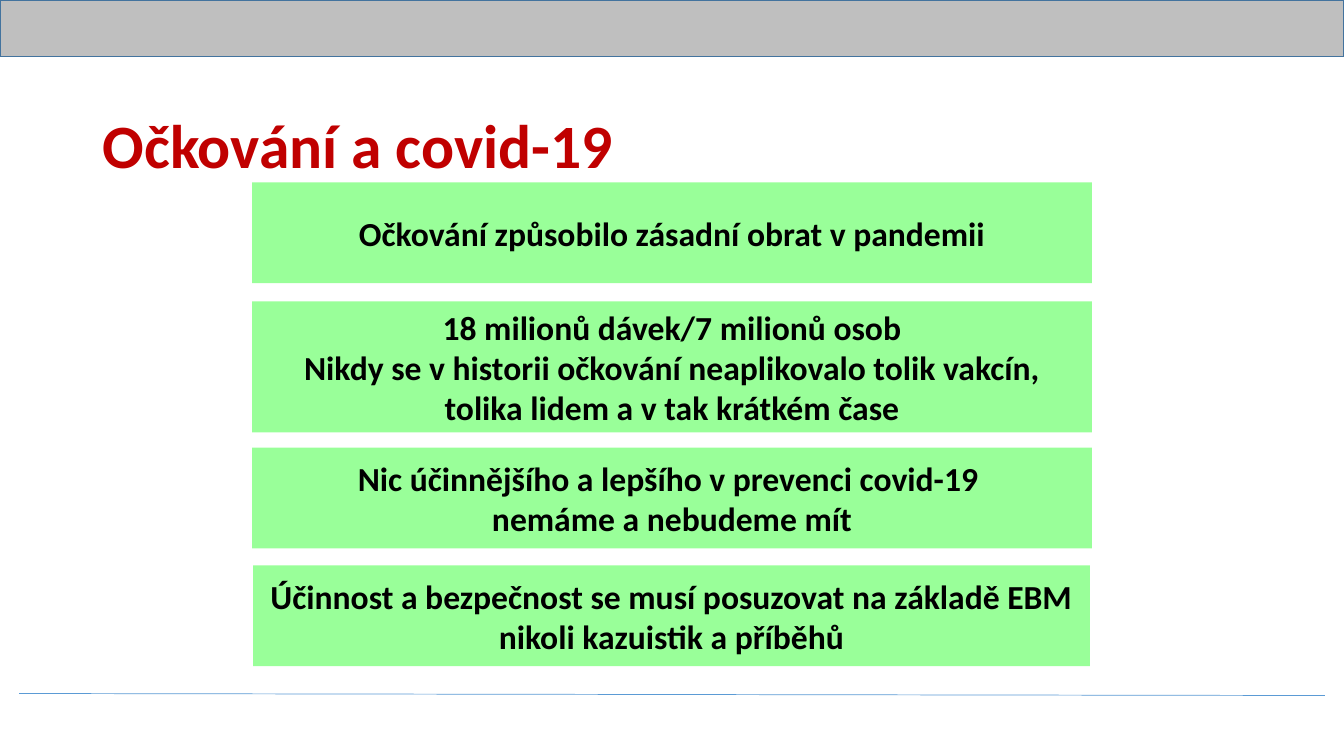
"""Build the slide on vaccination and covid-19."""
from dataclasses import dataclass

import lxml.etree
import pptx
import pptx.dml.color
import pptx.enum.shapes
import pptx.enum.text
import pptx.oxml.ns
import pptx.shapes.autoshape
import pptx.slide
import pptx.text.text
import pptx.util

Inches = pptx.util.Inches
Color = pptx.dml.color.RGBColor
Align = pptx.enum.text.PP_ALIGN
Anchor = pptx.enum.text.MSO_ANCHOR


@dataclass(frozen=True)
class Theme:
    """Colours, font and type sizes of the slide."""
    font: str = "Calibri"
    title_size: int = 44
    body_size: int = 24
    title: Color = Color(0xC0, 0x00, 0x00)
    body: Color = Color(0x00, 0x00, 0x00)
    panel: Color = Color(0x99, 0xFF, 0x99)
    band: Color = Color(0xBF, 0xBF, 0xBF)
    band_line: Color = Color(0x43, 0x73, 0x9E)
    footer_line: Color = Color(0x5B, 0x9B, 0xD5)


@dataclass(frozen=True)
class Panel:
    """A green statement panel, measured in inches."""
    top: float
    text: str
    height: float = 1.0
    left: float = 2.5
    width: float = 8.33


THEME = Theme()
SLIDE_WIDTH, SLIDE_HEIGHT = 13.33, 7.5
PANELS = [
    Panel(1.81, "Očkování způsobilo zásadní obrat v pandemii"),
    Panel(2.99, "18 milionů dávek/7 milionů osob\nNikdy se v historii očkování "
                "neaplikovalo tolik vakcín, tolika lidem a v tak krátkém čase", height=1.3),
    Panel(4.44, "Nic účinnějšího a lepšího v prevenci covid-19 \nnemáme a nebudeme mít"),
    Panel(5.61, "Účinnost a bezpečnost se musí posuzovat na základě EBM\n"
                "nikoli kazuistik a příběhů", left=2.51, width=8.3),
]


def write_text(frame: pptx.text.text.TextFrame, text: str, size: int, color: Color,
               align: Align, anchor: Anchor) -> None:
    """Fill a text frame with bold text in the theme font."""
    frame.text = text
    frame.word_wrap = True
    frame.vertical_anchor = anchor
    for paragraph in frame.paragraphs:
        paragraph.alignment = align
        for run in paragraph.runs:
            run.font.name = THEME.font
            run.font.size = pptx.util.Pt(size)
            run.font.bold = True
            run.font.color.rgb = color


def add_rectangle(slide: pptx.slide.Slide, left: float, top: float, width: float,
                  height: float, fill: Color) -> pptx.shapes.autoshape.Shape:
    """Add a flat rectangle without an outline."""
    shape = slide.shapes.add_shape(pptx.enum.shapes.MSO_SHAPE.RECTANGLE, Inches(left),
                                   Inches(top), Inches(width), Inches(height))
    shape.shadow.inherit = False
    shape.fill.solid()
    shape.fill.fore_color.rgb = fill
    shape.line.fill.background()
    return shape


def add_frame(slide: pptx.slide.Slide) -> None:
    """Add the footer line and the band across the top."""
    line = slide.shapes.add_connector(pptx.enum.shapes.MSO_CONNECTOR.STRAIGHT, Inches(0.19),
                                      Inches(6.88), Inches(13.14), Inches(6.9))
    line.line.color.rgb = THEME.footer_line
    line.line.width = pptx.util.Pt(0.5)
    properties = line._element.spPr
    lxml.etree.SubElement(properties, pptx.oxml.ns.qn("a:effectLst"))
    band = add_rectangle(slide, 0, 0, SLIDE_WIDTH, 0.56, THEME.band)
    band.line.color.rgb = THEME.band_line
    band.line.width = pptx.util.Pt(1)


def add_title(slide: pptx.slide.Slide) -> None:
    """Add the slide title."""
    title = slide.shapes.add_textbox(Inches(0.92), Inches(0.4), Inches(11.5), Inches(1.45))
    write_text(title.text_frame, "Očkování a covid-19", THEME.title_size, THEME.title,
               Align.LEFT, Anchor.BOTTOM)
    title.text_frame.paragraphs[0].line_spacing = 0.9


def add_panel(slide: pptx.slide.Slide, panel: Panel) -> None:
    """Add one statement panel."""
    shape = add_rectangle(slide, panel.left, panel.top, panel.width, panel.height, THEME.panel)
    write_text(shape.text_frame, panel.text, THEME.body_size, THEME.body,
               Align.CENTER, Anchor.MIDDLE)


def main() -> None:
    """Build and save the presentation."""
    presentation = pptx.Presentation()
    presentation.slide_width = Inches(SLIDE_WIDTH)
    presentation.slide_height = Inches(SLIDE_HEIGHT)
    slide = presentation.slides.add_slide(presentation.slide_layouts[6])
    add_frame(slide)
    add_title(slide)
    for panel in PANELS:
        add_panel(slide, panel)
    presentation.save("out.pptx")


if __name__ == "__main__":
    main()
